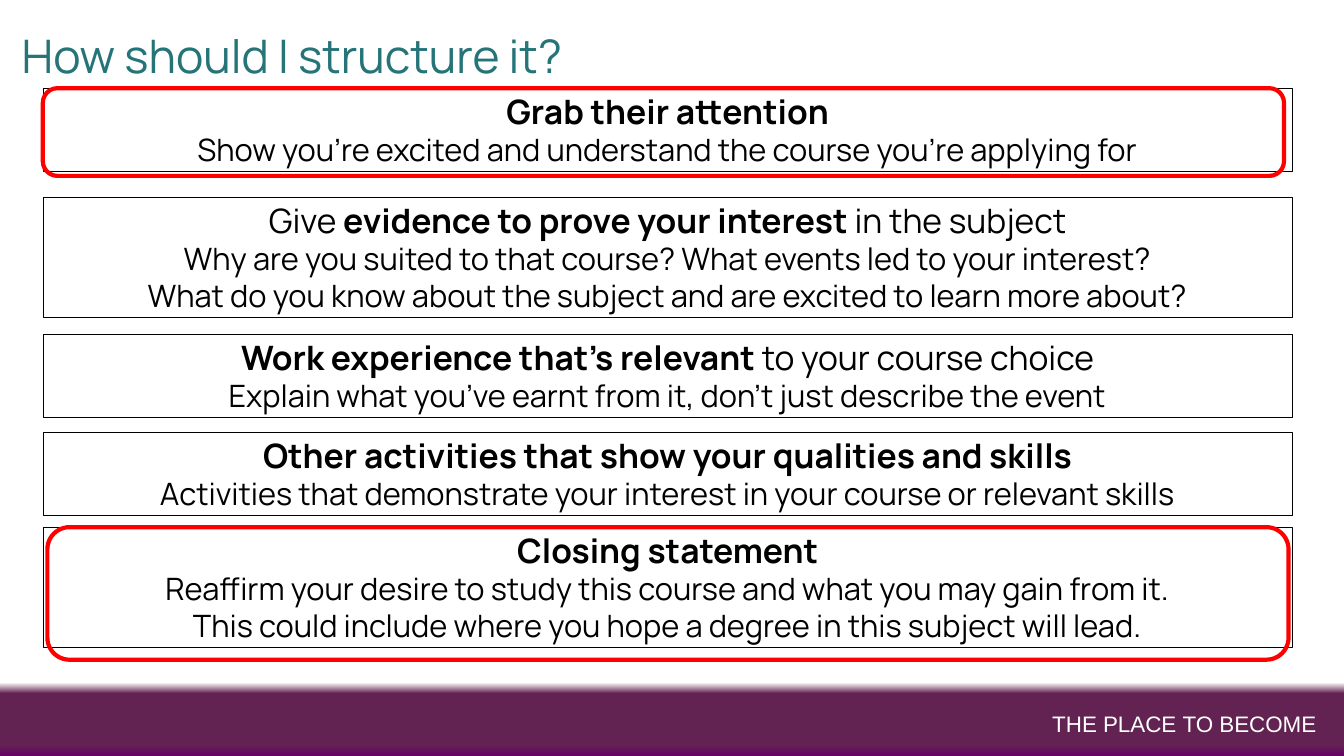
from copy import deepcopy

from pptx import Presentation
from pptx.dml.color import RGBColor
from pptx.enum.shapes import MSO_SHAPE
from pptx.enum.text import MSO_ANCHOR, MSO_AUTO_SIZE, PP_ALIGN
from pptx.oxml.ns import qn
from pptx.util import Inches, Pt

RECT, ROUND = MSO_SHAPE.RECTANGLE, MSO_SHAPE.ROUNDED_RECTANGLE
TOP, BOTTOM = MSO_ANCHOR.TOP, MSO_ANCHOR.BOTTOM
LEFT, CENTER = PP_ALIGN.LEFT, PP_ALIGN.CENTER
FIXED, GROW = MSO_AUTO_SIZE.NONE, MSO_AUTO_SIZE.SHAPE_TO_FIT_TEXT

WHITE = RGBColor(0xFF, 0xFF, 0xFF)
BLACK = RGBColor(0, 0, 0)
TEAL = RGBColor(0x25, 0x74, 0x78)
RED = RGBColor(0xFF, 0, 0)
PLUM = RGBColor(0x62, 0x23, 0x52)
PURPLE = RGBColor(0x66, 0, 0x66)

WIDTH, HEIGHT = 26.67, 15
BOX_LEFT, BOX_WIDTH = 0.85, 24.8
RING_WIDTH = 24.63
BAND_TOP = 13.54
BAND_STOPS = [(0, WHITE), (0.15, PLUM), (0.85, PLUM), (1, PURPLE)]

# Top of each box, then its lines; ** marks bold text.
STEPS = [
    (1.75, ["**Grab their attention**",
            "Show you’re excited and understand the course you’re applying for"]),
    (3.91, ["Give **evidence to prove your interest **in the subject",
            "Why are you suited to that course? What events led to your interest?",
            "What do you know about the subject and are excited to learn more about?"]),
    (6.63, ["**Work experience that’s relevant **to your course choice",
            "Explain what you’ve earnt from it, don’t just describe the event"]),
    (8.57, ["**Other activities that show your qualities and skills**",
            "Activities that demonstrate your interest in your course or relevant skills"]),
    (10.46, ["**Closing statement**",
             "Reaffirm your desire to study this course and what you may gain from it.",
             "This could include where you hope a degree in this subject will lead."]),
]
RINGS = [(0.85, 1.75, 1.74), (0.94, 10.46, 2.63)]


def write(para, text, size=44, font="Manrope", color=BLACK, align=CENTER,
          space=None, small=False):
    """Fill a paragraph, with the text between ** marks in bold."""
    para.alignment = align
    if space:
        para.line_spacing = space
    for i, part in enumerate(text.split("**")):
        if not part:
            continue
        run = para.add_run()
        run.text = part
        run.font.size = Pt(size)
        run.font.name = font
        run.font.color.rgb = color
        run.font.bold = i % 2 == 1
        if small:
            run.font._element.set("cap", "small")


class Deck:
    def __init__(self):
        self.show = Presentation()
        self.show.slide_width = Inches(WIDTH)
        self.show.slide_height = Inches(HEIGHT)
        self.slide = self.show.slides.add_slide(self.show.slide_layouts[5])

    def title(self, text, *place):
        shape = self.slide.shapes.title
        shape.left, shape.top, shape.width, shape.height = map(Inches, place)
        frame = shape.text_frame
        frame.auto_size = FIXED
        frame.word_wrap = True
        frame.vertical_anchor = BOTTOM
        frame.margin_left = frame.margin_right = Inches(0.2)
        frame.margin_top = frame.margin_bottom = Inches(0.1)
        write(frame.paragraphs[0], text, size=66, color=TEAL, align=LEFT, space=0.9)

    def shape(self, kind, *place):
        shape = self.slide.shapes.add_shape(kind, *map(Inches, place))
        shape.shadow.inherit = False
        return shape

    def band(self, stops, *place):
        """Draw a bar whose colours run from top to bottom."""
        shape = self.shape(RECT, *place)
        shape.line.fill.background()
        fill = shape.fill
        fill.gradient()
        fill.gradient_angle = 270
        group = shape._element.spPr.find(qn("a:gradFill")).find(qn("a:gsLst"))
        while len(group) < len(stops):
            group.append(deepcopy(group[0]))
        for stop, (pos, color) in zip(fill.gradient_stops, stops):
            stop.position = pos
            stop.color.rgb = color

    def text(self, *place):
        box = self.slide.shapes.add_textbox(*map(Inches, place))
        frame = box.text_frame
        frame.word_wrap = True
        frame.auto_size = GROW
        frame.vertical_anchor = TOP
        return box

    def step(self, top, lines):
        tall = 0.91 + 0.74 * (len(lines) - 1)
        box = self.text(BOX_LEFT, top, BOX_WIDTH, tall)
        box.line.color.rgb = BLACK
        box.line.width = Pt(0.75)
        frame = box.text_frame
        for i, line in enumerate(lines):
            para = frame.add_paragraph() if i else frame.paragraphs[0]
            write(para, line, size=44 if i else 48)

    def ring(self, left, top, tall):
        shape = self.shape(ROUND, left, top, RING_WIDTH, tall)
        shape.fill.background()
        shape.line.color.rgb = RED
        shape.line.width = Pt(6)


def main():
    deck = Deck()
    deck.band(BAND_STOPS, 0, BAND_TOP, WIDTH, HEIGHT - BAND_TOP)
    motto = deck.text(20.62, 13.93, 5.76, 0.77)
    write(motto.text_frame.paragraphs[0], "the place to become",
          size=40, font="Arial", color=WHITE, small=True)
    deck.title("How should I structure it?", 0.23, 0.01, 19.2, 1.74)
    for top, lines in STEPS:
        deck.step(top, lines)
    for ring in RINGS:
        deck.ring(*ring)
    deck.show.save("out.pptx")


if __name__ == "__main__":
    main()
